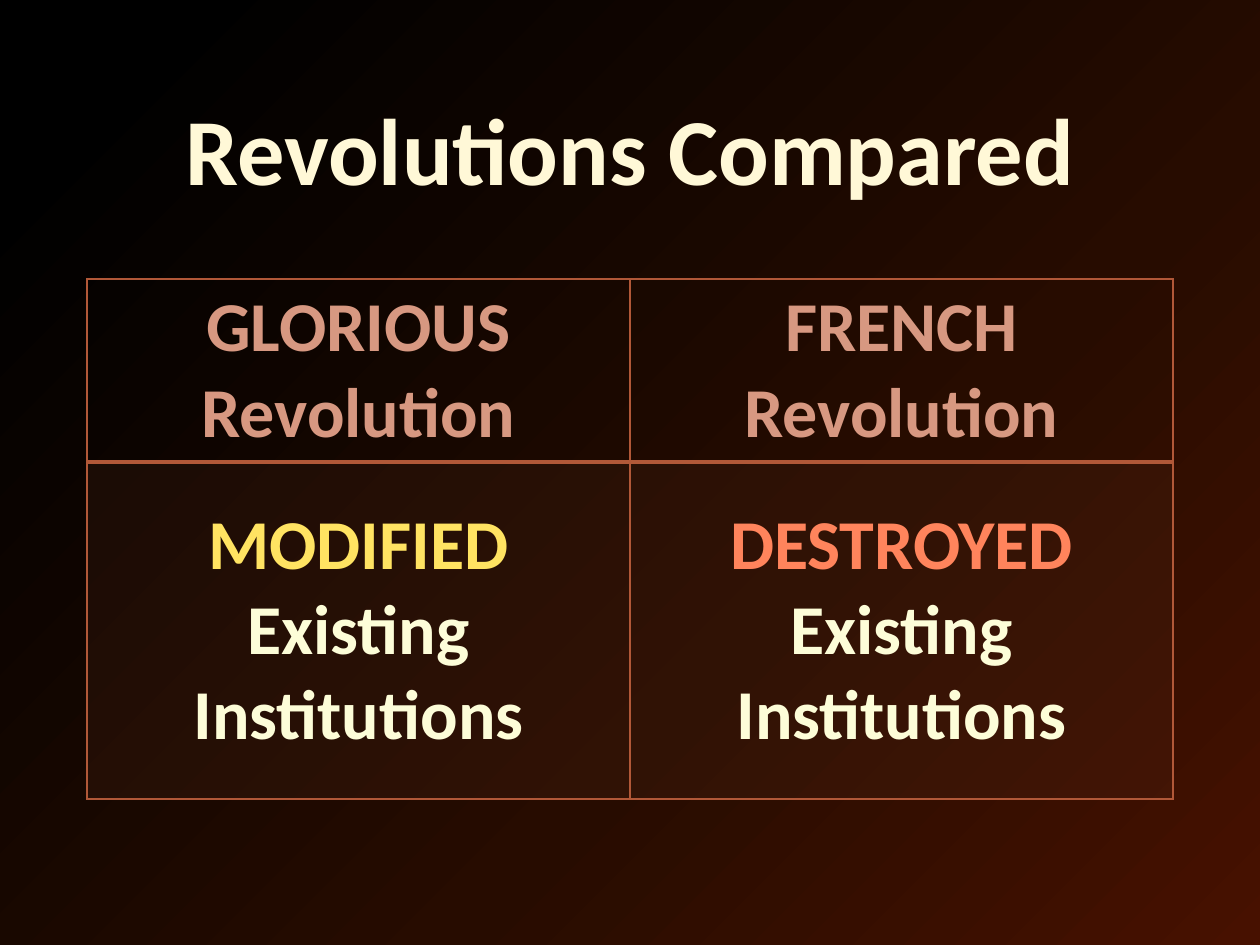
from dataclasses import dataclass

from lxml.etree import SubElement
from pptx import Presentation
from pptx.dml.color import RGBColor
from pptx.enum.text import MSO_ANCHOR as Anchor, PP_ALIGN as Align
from pptx.oxml.ns import qn
from pptx.util import Pt

EMU_PER_PX = 914400 / 126


@dataclass(frozen=True)
class Theme:
    font: str = "Calibri"
    title_size: int = 54
    cell_size: int = 40
    title: str = "FFF8D7"
    header: str = "D79881"
    body: str = "FDFDD8"
    modified: str = "FFE362"
    destroyed: str = "FF845C"
    border: str = "B15838"
    cell_fill: str = "582C1C"
    cell_opacity: int = 20
    background: tuple = ((9, "000000"), (63, "270C00"), (100, "471100"))
    background_angle: int = 45


THEME = Theme()

# Each column: heading, then the (text, colour) runs below it
COLUMNS = [
    ("GLORIOUS Revolution",
     [("MODIFIED ", THEME.modified), ("Existing Institutions", THEME.body)]),
    ("FRENCH Revolution",
     [("DESTROYED ", THEME.destroyed), ("Existing Institutions", THEME.body)]),
]


def px(length):
    return round(length * EMU_PER_PX)


def add_color(parent, color):
    solid = SubElement(parent, qn("a:solidFill"))
    return SubElement(solid, qn("a:srgbClr"), val=color)


def format_run(run, size, color):
    run.font.name = THEME.font
    run.font.size = Pt(size)
    run.font.bold = True
    run.font.color.rgb = RGBColor.from_string(color)


def fill_background(slide):
    fill = slide.background.fill
    fill.gradient()
    fill.gradient_angle = 360 - THEME.background_angle  # counted anticlockwise
    stops = next(slide.element.iter(qn("a:gsLst")))
    for stop in list(stops):
        stops.remove(stop)
    for percent, color in THEME.background:
        stop = SubElement(stops, qn("a:gs"), pos=str(percent * 1000))
        SubElement(stop, qn("a:srgbClr"), val=color)


def add_title(slide, left, top, width, height):
    text_frame = slide.shapes.add_textbox(
        px(left), px(top), px(width), px(height)).text_frame
    text_frame.word_wrap = True
    text_frame.vertical_anchor = Anchor.MIDDLE
    text_frame.text = "Revolutions Compared"
    paragraph = text_frame.paragraphs[0]
    paragraph.alignment = Align.CENTER
    paragraph.line_spacing = 0.9
    format_run(paragraph.runs[0], THEME.title_size, THEME.title)


def set_borders(cell, top, bottom):
    properties = cell._tc.get_or_add_tcPr()
    widths = {"a:lnL": 1, "a:lnR": 1, "a:lnT": top, "a:lnB": bottom}
    for index, (side, points) in enumerate(widths.items()):
        line = SubElement(properties, qn(side), w=str(Pt(points)))
        add_color(line, THEME.border)
        properties.insert(index, line)


def fill_cell(cell, runs):
    cell.vertical_anchor = Anchor.MIDDLE
    paragraph = cell.text_frame.paragraphs[0]
    paragraph.alignment = Align.CENTER
    for text, color in runs:
        run = paragraph.add_run()
        run.text = text
        format_run(run, THEME.cell_size, color)


def add_comparison(slide, left, top, width, header_height, body_height):
    table = slide.shapes.add_table(
        2, len(COLUMNS), px(left), px(top), px(width),
        px(header_height + body_height)).table
    table.first_row = table.horz_banding = False
    table.rows[0].height = px(header_height)
    table.rows[1].height = px(body_height)

    for index, (heading, body_runs) in enumerate(COLUMNS):
        # Heading cell
        header = table.cell(0, index)
        fill_cell(header, [(heading, THEME.header)])
        header.fill.background()
        set_borders(header, top=1, bottom=2)

        # Tinted body cell
        body = table.cell(1, index)
        fill_cell(body, body_runs)
        body.fill.solid()
        body.fill.fore_color.rgb = RGBColor.from_string(THEME.cell_fill)
        tint = body._tc.tcPr.find(qn("a:solidFill"))[0]
        SubElement(tint, qn("a:alpha"), val=str(THEME.cell_opacity * 1000))
        set_borders(body, top=2, bottom=1)


def main():
    presentation = Presentation()
    presentation.slide_width = px(1260)
    presentation.slide_height = px(945)
    slide = presentation.slides.add_slide(presentation.slide_layouts[6])
    fill_background(slide)
    add_title(slide, 0, 63, 1260, 183)
    add_comparison(slide, 87, 279, 1086, header_height=183, body_height=337)
    presentation.save("out.pptx")


if __name__ == "__main__":
    main()
